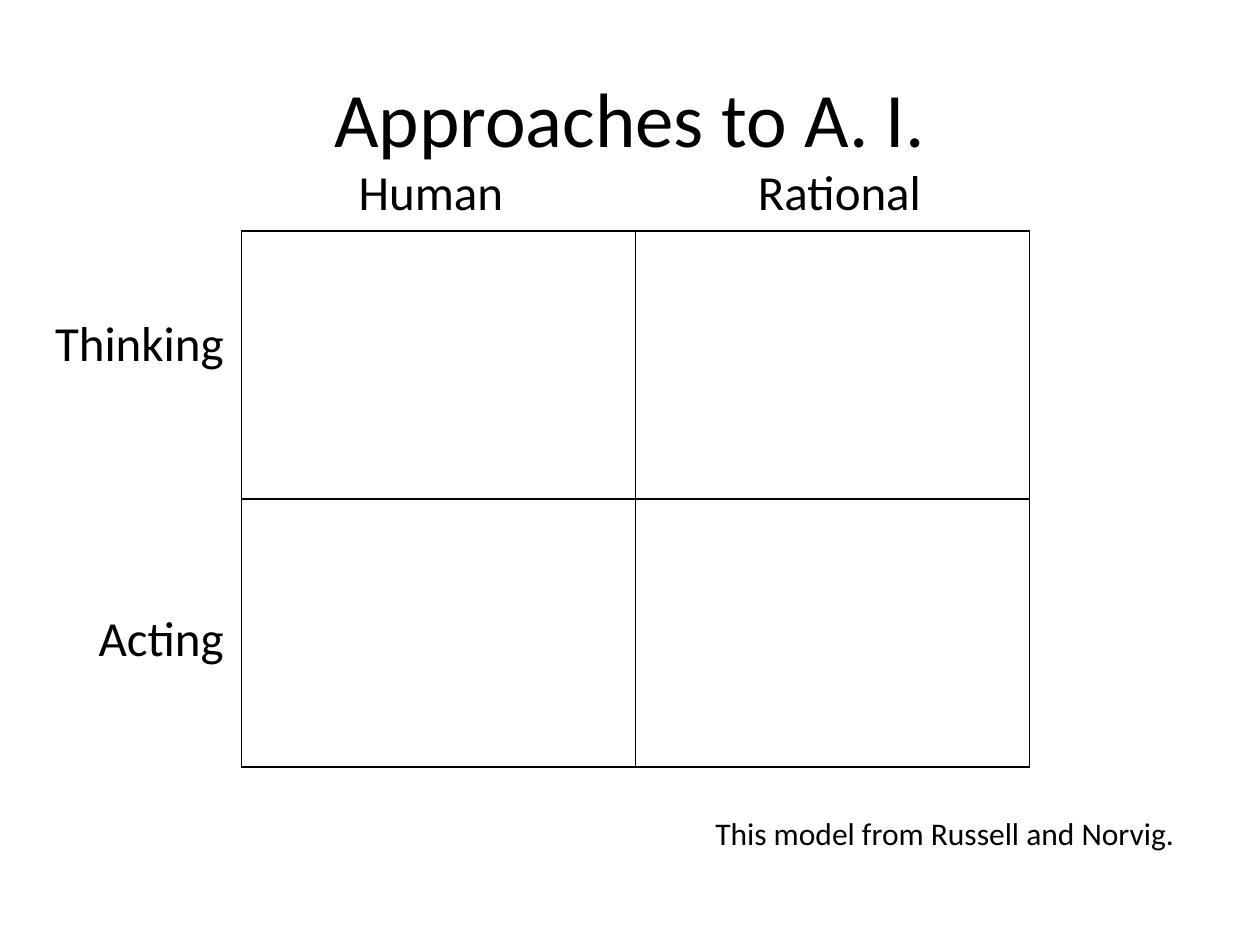
from dataclasses import dataclass

from lxml import etree
from pptx import Presentation
from pptx.dml.color import RGBColor
from pptx.enum.text import MSO_ANCHOR, PP_ALIGN
from pptx.oxml.ns import qn
from pptx.util import Cm, Pt

LEFT, CENTER, RIGHT = PP_ALIGN.LEFT, PP_ALIGN.CENTER, PP_ALIGN.RIGHT
TOP, MIDDLE = MSO_ANCHOR.TOP, MSO_ANCHOR.MIDDLE
BLANK_LAYOUT = 6
BORDER_SIDES = ("a:lnL", "a:lnR", "a:lnT", "a:lnB")


@dataclass(frozen=True)
class Theme:
    font: str = "Calibri"
    ink: str = "000000"
    title_size: int = 44
    label_size: int = 28
    credit_size: int = 18
    border_width: int = 1


class SlideBuilder:
    def __init__(self, slide, theme):
        self.slide = slide
        self.theme = theme

    def text(self, lines, left, top, width, height, size,
             align=LEFT, anchor=TOP, gap=0, tab=None):
        box = self.slide.shapes.add_textbox(Cm(left), Cm(top), Cm(width), Cm(height))
        frame = box.text_frame
        frame.word_wrap = True
        frame.vertical_anchor = anchor
        for index, line in enumerate(lines):
            paragraph = frame.add_paragraph() if index else frame.paragraphs[0]
            paragraph.alignment = align
            if index:
                paragraph.space_before = Pt(gap)
            if tab:
                self.tab_stop(paragraph, tab)
            run = paragraph.add_run()
            run.text = line
            run.font.name = self.theme.font
            run.font.size = Pt(size)
            run.font.color.rgb = RGBColor.from_string(self.theme.ink)

    def tab_stop(self, paragraph, position):
        properties = paragraph._p.get_or_add_pPr()
        stops = etree.SubElement(properties, qn("a:tabLst"))
        etree.SubElement(stops, qn("a:tab"), pos=str(Cm(position)), algn="l")

    def grid(self, rows, columns, left, top, cell_width, cell_height):
        table = self.slide.shapes.add_table(
            rows, columns, Cm(left), Cm(top),
            Cm(columns * cell_width), Cm(rows * cell_height)).table
        table.first_row = False
        table.horz_banding = False
        for column in table.columns:
            column.width = Cm(cell_width)
        for row in table.rows:
            row.height = Cm(cell_height)
        for cell in table.iter_cells():
            self.border(cell)
            cell.fill.background()

    def border(self, cell):
        properties = cell._tc.get_or_add_tcPr()
        for side in BORDER_SIDES:
            line = etree.SubElement(properties, qn(side), w=str(Pt(self.theme.border_width)))
            fill = etree.SubElement(line, qn("a:solidFill"))
            etree.SubElement(fill, qn("a:srgbClr"), val=self.theme.ink)


def main():
    deck = Presentation()
    deck.slide_width, deck.slide_height = Cm(25.4), Cm(19.05)
    theme = Theme()
    builder = SlideBuilder(deck.slides.add_slide(deck.slide_layouts[BLANK_LAYOUT]), theme)

    builder.text(["Approaches to A. I."], 1.27, 0.76, 22.86, 3.18,
                 theme.title_size, align=CENTER, anchor=MIDDLE)
    builder.grid(2, 2, 4.87, 4.66, 7.94, 5.4)
    builder.text(["Human\tRational"], 6.98, 3.13, 12.47, 1.45,
                 theme.label_size, tab=8.05)
    builder.text(["Thinking", "Acting"], 0.8, 6.18, 3.96, 7.45,
                 theme.label_size, align=RIGHT, gap=135)
    builder.text(["This model from Russell and Norvig."], 14.17, 16.28, 9.9, 1.02,
                 theme.credit_size)
    deck.save("out.pptx")


if __name__ == "__main__":
    main()
